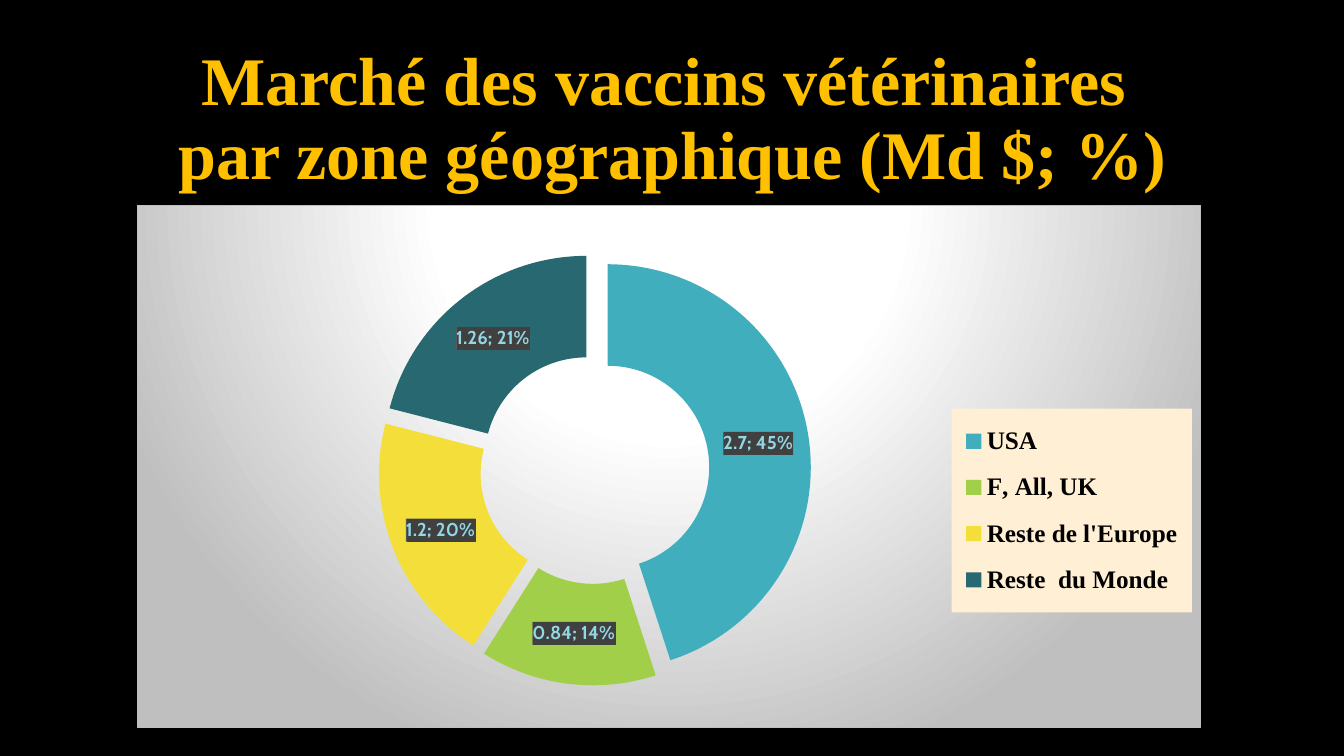
import lxml.etree
import pptx
import pptx.chart.data
import pptx.dml.color
import pptx.enum.chart
import pptx.enum.text
import pptx.util
from pptx.util import Inches

ZONES = [
    ("USA", 2.7, "41AEBD"),
    ("F, All, UK", 0.84, "A2CF49"),
    ("Reste de l'Europe", 1.2, "F4DE3A"),
    ("Reste  du Monde", 1.26, "276871"),
]
NAMESPACES = {
    "c": "http://schemas.openxmlformats.org/drawingml/2006/chart",
    "a": "http://schemas.openxmlformats.org/drawingml/2006/main",
}
PANEL_FILL = """<a:gradFill><a:gsLst>
<a:gs pos="0"><a:srgbClr val="FFFFFF"/></a:gs>
<a:gs pos="39000"><a:srgbClr val="FFFFFF"/></a:gs>
<a:gs pos="100000"><a:srgbClr val="BFBFBF"/></a:gs></a:gsLst>
<a:path path="circle"><a:fillToRect l="50000" t="-80000" r="50000" b="180000"/></a:path>
</a:gradFill><a:ln w="9525"><a:solidFill><a:srgbClr val="BFBFBF"/></a:solidFill></a:ln>"""
LEGEND_FILL = '<a:solidFill><a:srgbClr val="FFEFD5"/></a:solidFill>'
LABEL_FILL = """<a:pattFill prst="dkVert"><a:fgClr><a:srgbClr val="404040"/></a:fgClr>
<a:bgClr><a:srgbClr val="595959"/></a:bgClr></a:pattFill>"""


def color(value):
    return pptx.dml.color.RGBColor.from_string(value)


def format_font(font, name, size, value, bold=False):
    font.name = name
    font.size = pptx.util.Pt(size)
    font.color.rgb = color(value)
    font.bold = bold


def write_text(frame, text, align=pptx.enum.text.PP_ALIGN.CENTER, spacing=0.9, **font):
    frame.text = text
    frame.word_wrap = True
    frame.vertical_anchor = pptx.enum.text.MSO_ANCHOR.MIDDLE
    for para in frame.paragraphs:
        para.alignment = align
        para.line_spacing = spacing
        for span in para.runs:
            format_font(span.font, **font)


def chart_element(tag, content="", **attributes):
    names = " ".join(f'xmlns:{key}="{uri}"' for key, uri in NAMESPACES.items())
    values = " ".join(f'{key}="{value}"' for key, value in attributes.items())
    return lxml.etree.fromstring(f"<c:{tag} {names} {values}>{content}</c:{tag}>")


def child(parent, tag):
    return parent.find(f"c:{tag}", NAMESPACES)


def layout_element(left, top, width, height, inner=False):
    content = '<c:layoutTarget val="inner"/>' if inner else ""
    content += '<c:xMode val="edge"/><c:yMode val="edge"/>'
    for tag, value in zip("xywh", (left, top, width, height)):
        content += f'<c:{tag} val="{value}"/>'
    return chart_element("layout", f"<c:manualLayout>{content}</c:manualLayout>")


def replace_layout(parent, layout, position):
    old = child(parent, "layout")
    if old is not None:
        parent.remove(old)
    parent.insert(position, layout)


def add_title(slide):
    title = slide.shapes.title
    title.left, title.top = Inches(0.92), Inches(0.47)
    title.width, title.height = Inches(11.5), Inches(1.45)
    write_text(
        title.text_frame,
        "Marché des vaccins vétérinaires \vpar zone géographique (Md $; %)",
        name="Times New Roman", size=48.6, value="FFC000", bold=True,
    )


def style_legend(chart):
    chart.has_legend = True
    legend = chart.legend
    legend.position = pptx.enum.chart.XL_LEGEND_POSITION.RIGHT
    legend.include_in_layout = False
    format_font(legend.font, "Times New Roman", 18, "000000", bold=True)
    element = child(chart.element.chart, "legend")
    child(element, "txPr").addprevious(chart_element("spPr", LEGEND_FILL))
    position = 0 if child(element, "legendPos") is None else 1
    replace_layout(element, layout_element(0.766, 0.39, 0.226, 0.39), position)


def style_ring(series):
    name = child(series._element, "tx")
    name.addnext(chart_element("explosion", val=13))
    for index, (_, _, fill) in enumerate(ZONES):
        point = series.points[index].format
        point.fill.solid()
        point.fill.fore_color.rgb = color(fill)
        point.line.fill.background()
    labels = series.data_labels
    labels.show_value = True
    labels.show_percentage = True
    format_font(labels.font, "Cabin", 13.3, "94D7E4", bold=True)
    element = child(series._element, "dLbls")
    child(element, "txPr").addprevious(chart_element("spPr", LABEL_FILL))
    child(element, "showBubbleSize").addnext(chart_element("separator", "; "))


def add_market_chart(slide):
    data = pptx.chart.data.CategoryChartData()
    data.categories = [zone for zone, _, _ in ZONES]
    data.add_series("Series 1", [amount for _, amount, _ in ZONES])
    chart = slide.shapes.add_chart(
        pptx.enum.chart.XL_CHART_TYPE.DOUGHNUT_EXPLODED,
        Inches(1.36), Inches(2.03), Inches(10.55), Inches(5.19), data,
    ).chart
    chart.has_title = False
    format_font(chart.font, "Cabin", 10, "94D7E4")
    chart.element.chart.addnext(chart_element("spPr", PANEL_FILL))
    ring_layout = layout_element(0.226, 0.092, 0.408, 0.828, inner=True)
    replace_layout(child(chart.element.chart, "plotArea"), ring_layout, 0)
    plot = chart.plots[0]
    plot.vary_by_categories = True
    series = plot.series[0]
    for old in series._element.findall("c:explosion", NAMESPACES):
        series._element.remove(old)
    style_ring(series)
    style_legend(chart)


def main():
    """Build the slide on the veterinary vaccine market by region."""
    deck = pptx.Presentation()
    deck.slide_width, deck.slide_height = Inches(13.33), Inches(7.5)
    slide = deck.slides.add_slide(deck.slide_layouts[5])
    slide.background.fill.solid()
    slide.background.fill.fore_color.rgb = color("000000")
    add_title(slide)
    add_market_chart(slide)
    deck.save("out.pptx")


if __name__ == "__main__":
    main()
